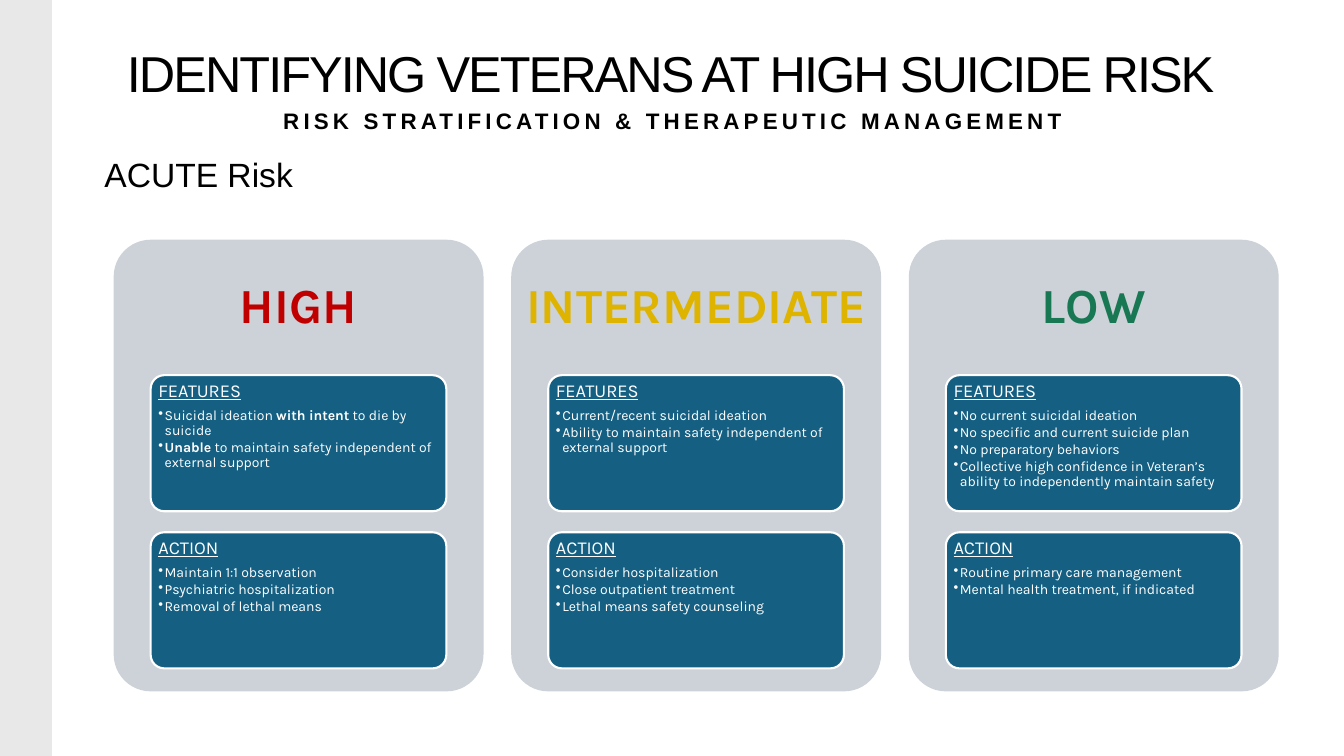
from lxml.etree import SubElement
from pptx import Presentation
from pptx.dml.color import RGBColor
from pptx.enum.shapes import MSO_SHAPE as Preset
from pptx.enum.text import MSO_ANCHOR as Anchor, MSO_AUTO_SIZE as AutoSize, PP_ALIGN as Align
from pptx.oxml.ns import qn
from pptx.util import Pt

COLORS = {
    "black": "000000",
    "white": "FFFFFF",
    "band": "E8E8E8",
    "panel": "CCD2D8",
    "card": "156082",
    "high": "C00000",
    "intermediate": "DEB400",
    "low": "177853",
}

LEVELS = [
    ("HIGH", "high",
     ["Suicidal ideation **with intent** to die by suicide",
      "**Unable** to maintain safety independent of external support"],
     ["Maintain 1:1 observation", "Psychiatric hospitalization", "Removal of lethal means"]),
    ("INTERMEDIATE", "intermediate",
     ["Current/recent suicidal ideation",
      "Ability to maintain safety independent of external support"],
     ["Consider hospitalization", "Close outpatient treatment", "Lethal means safety counseling"]),
    ("LOW", "low",
     ["No current suicidal ideation", "No specific and current suicide plan",
      "No preparatory behaviors",
      "Collective high confidence in Veteran’s ability to independently maintain safety"],
     ["Routine primary care management", "Mental health treatment, if indicated"]),
]

PANEL_LEFT, PANEL_TOP, PANEL_PITCH = 81.2, 171.2, 284
PANEL_WIDTH, PANEL_HEIGHT, HEADING_HEIGHT = 264.2, 322.6, 97.2
CARD_INDENT, CARD_TOP, CARD_PITCH = 26.4, 268, 112.2
CARD_WIDTH, CARD_HEIGHT = 211.2, 97.2


def rgb(name):
    return RGBColor.from_string(COLORS[name])


def style_run(run, size, color="black", face="Arial", bold=False, underline=False, tracking=0):
    run.font.name = face
    run.font.size = Pt(size)
    run.font.bold = bold
    run.font.underline = underline
    run.font.color.rgb = rgb(color)
    if tracking:
        run.font._element.set("spc", str(tracking))


def set_margins(frame, side, edge):
    frame.margin_left = frame.margin_right = Pt(side)
    frame.margin_top = frame.margin_bottom = Pt(edge)


def place(shape, left, top, width, height):
    shape.left, shape.top = Pt(left), Pt(top)
    shape.width, shape.height = Pt(width), Pt(height)


def write_line(frame, text, align, spacing, size, wrap, anchor=Anchor.TOP, **style):
    frame.text = text
    frame.word_wrap = wrap
    frame.auto_size = AutoSize.NONE if wrap else AutoSize.SHAPE_TO_FIT_TEXT
    frame.vertical_anchor = anchor
    set_margins(frame, 7.2, 3.6)
    line = frame.paragraphs[0]
    line.alignment = align
    line.line_spacing = spacing
    line.space_before = Pt(0)
    style_run(line.runs[0], size, **style)


def add_block(slide, preset, left, top, width, height, fill, outline=None, weight=1):
    block = slide.shapes.add_shape(preset, Pt(left), Pt(top), Pt(width), Pt(height))
    block.shadow.inherit = False
    block.fill.solid()
    block.fill.fore_color.rgb = rgb(fill)
    if preset == Preset.ROUNDED_RECTANGLE:
        block.adjustments[0] = 0.1
    if outline:
        block.line.color.rgb = rgb(outline)
        block.line.width = Pt(weight)
    else:
        block.line.fill.background()
    return block


def add_text(slide, left, top, width, height, *content, **style):
    box = slide.shapes.add_textbox(Pt(left), Pt(top), Pt(width), Pt(height))
    write_line(box.text_frame, *content, **style)
    return box.text_frame


def add_panel(slide, left, level, color):
    add_block(slide, Preset.ROUNDED_RECTANGLE, left, PANEL_TOP,
              PANEL_WIDTH, PANEL_HEIGHT, "panel")
    heading = add_text(slide, left, PANEL_TOP, PANEL_WIDTH, HEADING_HEIGHT,
                       level, Align.CENTER, 0.9, 35, True, Anchor.MIDDLE,
                       color=color, face="Karla", bold=True)
    set_margins(heading, 3.6, 10.8)
    heading.paragraphs[0].space_after = Pt(12.2)


def add_bullet(frame, text):
    item = frame.add_paragraph()
    item.level = 1
    item.alignment = Align.LEFT
    item.line_spacing = 0.9
    item.space_after = Pt(1.3)
    properties = item._p.get_or_add_pPr()
    properties.set("marL", str(Pt(4.5)))
    properties.set("indent", str(-Pt(4.5)))
    SubElement(properties, qn("a:buChar"), char="•")
    for index, part in enumerate(text.split("**")):
        if part:
            run = item.add_run()
            run.text = part
            style_run(run, 10, "white", "Karla", bold=index % 2 == 1)


def add_card(slide, left, top, heading, items):
    card = add_block(slide, Preset.ROUNDED_RECTANGLE, left, top,
                     CARD_WIDTH, CARD_HEIGHT, "card", "white", 1.5)
    frame = card.text_frame
    write_line(frame, heading, Align.LEFT, 0.9, 13, True,
               color="white", face="Karla", underline=True)
    set_margins(frame, 2.7, 1.9)
    frame.paragraphs[0].space_after = Pt(4.9)
    for item in items:
        add_bullet(frame, item)


def main():
    deck = Presentation()
    deck.slide_width, deck.slide_height = Pt(960), Pt(540)
    slide = deck.slides.add_slide(deck.slide_layouts[5])

    title = slide.shapes.title
    write_line(title.text_frame, "IDENTIFYING VETERANS AT HIGH SUICIDE RISK", Align.CENTER,
               Pt(44.4), 36, False, Anchor.BOTTOM, tracking=-140)
    place(title, 81.4, 28, 795.6, 49)
    add_text(slide, 190.6, 73, 580.3, 26.6, "RISK STRATIFICATION & THERAPEUTIC MANAGEMENT",
             Align.CENTER, Pt(19.2), 16, False, bold=True, tracking=300)
    add_block(slide, Preset.RECTANGLE, 0, 0, 36.7, 540, "band", "band")
    add_text(slide, 67.5, 109.4, 809.3, 51, "ACUTE Risk", Align.LEFT, 0.9, 24, True)

    for column, (level, color, features, actions) in enumerate(LEVELS):
        left = PANEL_LEFT + column * PANEL_PITCH
        add_panel(slide, left, level, color)
        for row, (heading, items) in enumerate([("FEATURES", features), ("ACTION", actions)]):
            add_card(slide, left + CARD_INDENT, CARD_TOP + row * CARD_PITCH, heading, items)

    deck.save("out.pptx")


if __name__ == "__main__":
    main()
